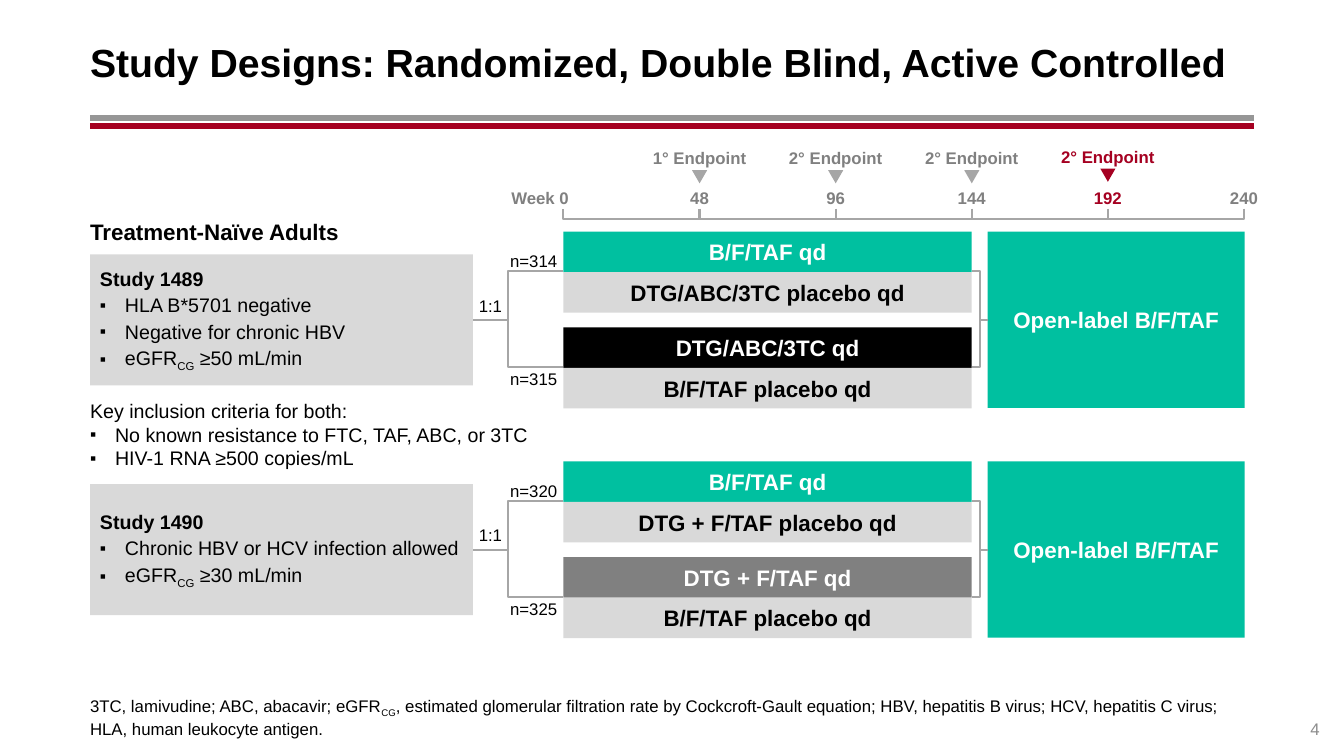
from lxml import etree
from pptx import Presentation
from pptx.dml.color import RGBColor
from pptx.enum.shapes import MSO_CONNECTOR, MSO_SHAPE
from pptx.enum.text import MSO_ANCHOR, PP_ALIGN
from pptx.oxml.ns import qn
from pptx.util import Cm, Pt

RECTANGLE, TRIANGLE = MSO_SHAPE.RECTANGLE, MSO_SHAPE.ISOSCELES_TRIANGLE
STRAIGHT = MSO_CONNECTOR.STRAIGHT
LEFT, CENTER, RIGHT = PP_ALIGN.LEFT, PP_ALIGN.CENTER, PP_ALIGN.RIGHT
TOP, MIDDLE, BOTTOM = MSO_ANCHOR.TOP, MSO_ANCHOR.MIDDLE, MSO_ANCHOR.BOTTOM

COLORS = {
    "black": "000000", "white": "FFFFFF", "red": "A50021", "teal": "00C0A0",
    "gray": "808080", "pale": "D9D9D9", "line": "A6A6A6", "rule": "969696",
    "number": "8C8C8C",
}
MARGIN, CONTENT_WIDTH = 2.27, 29.34
WEEK_ZERO, WEEK_STEP = 14.2, 3.43
BAR_WIDTH, BAR_HEIGHT = 3 * WEEK_STEP, 1.02
INSETS = (0.25, 0.13, 0.25, 0.13)
FLUSH = (0, 0.13, 0.25, 0.13)
NONE = (0, 0, 0, 0)


def rgb(name):
    return RGBColor.from_string(COLORS[name])


def add_bullet(para, indent):
    properties = para._p.get_or_add_pPr()
    properties.set("marL", str(Cm(indent)))
    properties.set("indent", str(-Cm(indent)))
    etree.SubElement(properties, qn("a:buSzPct")).set("val", "90000")
    etree.SubElement(properties, qn("a:buFont")).set("typeface", "Arial")
    etree.SubElement(properties, qn("a:buChar")).set("char", "▪")


def write(shape, lines, size=12, color="black", bold=False, bold_first=False,
          align=CENTER, anchor=TOP, insets=INSETS, wrap=False,
          bullets=False, before=0):
    """Fill a shape with lines; text between underscores is subscript.

    With bullets, every line but the first gets one.
    """
    frame = shape.text_frame
    frame.word_wrap, frame.vertical_anchor = wrap, anchor
    (frame.margin_left, frame.margin_top,
     frame.margin_right, frame.margin_bottom) = map(Cm, insets)
    for index, line in enumerate(lines):
        para = frame.add_paragraph() if index else frame.paragraphs[0]
        para.alignment, para.space_before = align, Pt(before)
        if bullets and index:
            add_bullet(para, 0.63)
        for part, text in enumerate(line.split("_")):
            span = para.add_run()
            span.text = text
            span.font.name, span.font.size = "Arial", Pt(size)
            span.font.bold = bold or (bold_first and index == 0)
            span.font.color.rgb = rgb(color)
            if part % 2:
                span._r.get_or_add_rPr().set("baseline", "-25000")


def add_label(page, left, top, width, height, *lines, **style):
    box = page.shapes.add_textbox(Cm(left), Cm(top), Cm(width), Cm(height))
    write(box, lines, **style)


def add_block(page, left, top, width, height, fill, kind=RECTANGLE):
    block = page.shapes.add_shape(kind, Cm(left), Cm(top), Cm(width), Cm(height))
    block.shadow.inherit = False
    block.fill.solid()
    block.fill.fore_color.rgb = rgb(fill)
    block.line.fill.background()
    return block


def add_line(page, start, end, color="line", weight=1.5):
    line = page.shapes.add_connector(STRAIGHT, *map(Cm, start + end))
    line.line.color.rgb, line.line.width = rgb(color), Pt(weight)
    etree.SubElement(line._element.spPr, qn("a:effectLst"))
    return line


def add_bracket(page, *points):
    corners = [(Cm(x), Cm(y)) for x, y in points]
    builder = page.shapes.build_freeform(*corners[0])
    builder.add_line_segments(corners[1:], close=False)
    bracket = builder.convert_to_shape()
    bracket.shadow.inherit = False
    bracket.fill.background()
    bracket.line.color.rgb, bracket.line.width = rgb("line"), Pt(1.5)


def add_header(page, left, top, width):
    add_label(page, left, top, width, 2.18,
              "Study Designs: Randomized, Double Blind, Active Controlled",
              size=28, bold=True, align=LEFT, anchor=MIDDLE, insets=FLUSH, wrap=True)
    for offset, color in ((2.51, "rule"), (2.72, "red")):
        y = top + offset
        add_line(page, (left, y), (left + width, y), color, 4.25)


def add_timeline(page, left, top):
    """Week axis with a label, and where due an endpoint marker, per tick."""
    axis = top + 1.95
    weeks = (("Week 0", None, "gray"), ("48", "1° Endpoint", "gray"),
             ("96", "2° Endpoint", "gray"), ("144", "2° Endpoint", "gray"),
             ("192", "2° Endpoint", "red"), ("240", None, "gray"))
    for index, (week, endpoint, color) in enumerate(weeks):
        x = left + index * WEEK_STEP
        if index:
            start = x - WEEK_STEP
            add_bracket(page, (x, axis - 0.25), (x, axis), (start, axis), (start, axis - 0.25))
        middle = x if index else x - 0.59
        add_label(page, middle - 1, top + 1.04, 2, 0.76, week,
                  color=color, bold=True, anchor=MIDDLE)
        if endpoint:
            lift = 0.04 if color == "red" else 0
            add_label(page, x - 1.45, top + 0.04 - lift, 2.9, 0.76, endpoint,
                      color=color, bold=True)
            marker = add_block(page, x - 0.19, top + 0.73 - lift, 0.38, 0.33,
                               "red" if color == "red" else "line", TRIANGLE)
            marker.rotation = 180


def add_study(page, left, top, criteria, sizes, arms):
    """Criteria box, 1:1 split, two pairs of treatment bars, open-label phase."""
    criteria_box = add_block(page, left, top + 0.57, 9.65, 3.3, "pale")
    write(criteria_box, criteria, size=14, bold_first=True, align=LEFT,
          anchor=MIDDLE, bullets=True, before=2)

    bar_right = WEEK_ZERO + BAR_WIDTH
    open_label = add_block(page, bar_right + 0.4, top, 6.48, 4.44, "teal")
    write(open_label, ["Open-label B/F/TAF"], size=16, color="white", bold=True,
          anchor=MIDDLE, insets=(0.25, 0, 0.25, 0), wrap=True)

    for offset, (text, fill, color) in zip((0, 1.02, 2.41, 3.43), arms):
        bar = add_block(page, WEEK_ZERO, top + offset, BAR_WIDTH, BAR_HEIGHT, fill)
        write(bar, [text], size=16, color=color, bold=True, anchor=MIDDLE, wrap=True)

    spine_left, spine_right = 12.8, bar_right + 0.2
    upper, lower, middle = top + 1, top + 3.42, top + 2.22
    for bar_edge, spine in ((WEEK_ZERO, spine_left), (bar_right, spine_right)):
        add_bracket(page, (bar_edge, lower), (spine, lower), (spine, upper), (bar_edge, upper))
    stem = add_line(page, (left + 9.65, middle), (spine_left, middle))
    stem.begin_connect(criteria_box, 3)
    stem = add_line(page, (bar_right + 0.4, middle), (spine_right, middle))
    stem.begin_connect(open_label, 1)

    add_label(page, 11.86, top + 1.6, 1, 0.51, "1:1", insets=NONE)
    for offset, size in zip((0.49, 3.45), sizes):
        add_label(page, 12.75, top + offset, 1.4, 0.51, size, insets=NONE)


def add_shared_criteria(page, left, top):
    add_label(page, left, top, 11.23, 1.8, "Key inclusion criteria for both:",
              "No known resistance to FTC, TAF, ABC, or 3TC", "HIV-1 RNA ≥500 copies/mL",
              size=14, align=LEFT, insets=NONE, bullets=True)


def add_footer(page, left, top, width):
    add_label(page, left, top, width, 1.02,
              "3TC, lamivudine; ABC, abacavir; eGFR_CG_, estimated glomerular filtration "
              "rate by Cockcroft-Gault equation; HBV, hepatitis B virus; HCV, hepatitis C "
              "virus; HLA, human leukocyte antigen.",
              align=LEFT, anchor=BOTTOM, insets=NONE, wrap=True)
    add_label(page, left + width, top, 1.65, 1.02, "4", color="number",
              align=RIGHT, anchor=BOTTOM, insets=NONE, wrap=True)


def main():
    deck = Presentation()
    deck.slide_width, deck.slide_height = Cm(33.87), Cm(19.05)
    page = deck.slides.add_slide(deck.slide_layouts[6])
    add_header(page, MARGIN, 0.46, CONTENT_WIDTH)
    add_timeline(page, WEEK_ZERO, 3.56)
    add_label(page, MARGIN, 5.37, 6.76, 0.94, "Treatment-Naïve Adults",
              size=16, bold=True, align=LEFT, insets=FLUSH)
    add_study(page, MARGIN, 5.84,
              ("Study 1489", "HLA B*5701 negative", "Negative for chronic HBV",
               "eGFR_CG_ ≥50 mL/min"),
              ("n=314", "n=315"),
              (("B/F/TAF qd", "teal", "white"),
               ("DTG/ABC/3TC placebo qd", "pale", "black"),
               ("DTG/ABC/3TC qd", "black", "white"),
               ("B/F/TAF placebo qd", "pale", "black")))
    add_shared_criteria(page, MARGIN, 10.06)
    add_study(page, MARGIN, 11.63,
              ("Study 1490", "Chronic HBV or HCV infection allowed",
               "eGFR_CG_ ≥30 mL/min"),
              ("n=320", "n=325"),
              (("B/F/TAF qd", "teal", "white"),
               ("DTG + F/TAF placebo qd", "pale", "black"),
               ("DTG + F/TAF qd", "gray", "white"),
               ("B/F/TAF placebo qd", "pale", "black")))
    add_footer(page, MARGIN, 17.6, CONTENT_WIDTH)
    deck.save("out.pptx")


if __name__ == "__main__":
    main()
